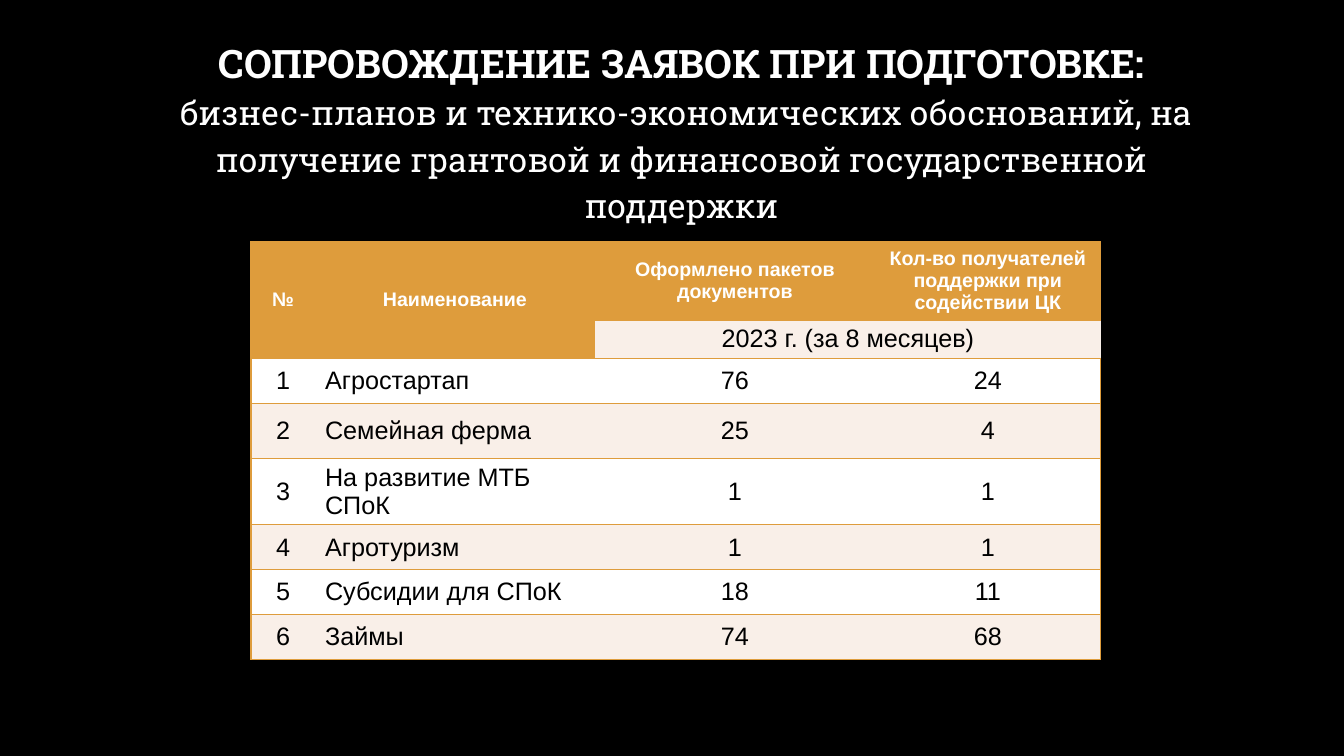
from itertools import accumulate

from lxml.etree import SubElement
from pptx import Presentation
from pptx.dml.color import RGBColor as RGB
from pptx.enum.text import MSO_ANCHOR as ANCHOR, PP_ALIGN as ALIGN
from pptx.oxml.ns import qn
from pptx.util import Emu, Pt

TITLE = "СОПРОВОЖДЕНИЕ ЗАЯВОК ПРИ ПОДГОТОВКЕ:"
SUBTITLE = (" бизнес-планов и технико-экономических обоснований, на получение "
            "грантовой и финансовой государственной поддержки")
HEADER = ["№", "Наименование", "Оформлено пакетов документов",
          "Кол-во получателей поддержки при содействии ЦК"]
PERIOD = "2023 г. (за 8 месяцев)"
SUPPORT = [
    ("Агростартап", 76, 24),
    ("Семейная ферма", 25, 4),
    ("На развитие МТБ СПоК", 1, 1),
    ("Агротуризм", 1, 1),
    ("Субсидии для СПоК", 18, 11),
    ("Займы", 74, 68),
]

THEME = {
    "background": RGB(0, 0, 0),
    "accent": "DE9C3C",
    "bands": ("FFFFFF", "F9EFE8"),
    "title": {"name": "Roboto Slab", "size": Pt(28), "bold": True},
    "subtitle": {"name": "Roboto Slab", "size": Pt(24), "bold": False},
    "header": {"name": "Arial", "size": Pt(14), "bold": True},
    "body": {"name": "Arial", "size": Pt(18), "bold": False},
    "light": RGB(255, 255, 255),
    "dark": RGB(0, 0, 0),
}

SLIDE = (1344, 756)
TITLE_BOX = (85, 27, 1143, 154)
TITLE_INDENT = 50
TABLE_AT = (251, 242)
COLUMNS = [64, 280, 280, 226]
ROWS = [78, 37, 45, 55, 66, 45, 45, 45]


def px(n):
    return Emu(round(n * 914400 / 100.8))


def write(p, text, style, color, align=ALIGN.CENTER):
    p.alignment = align
    r = p.add_run()
    r.text = text
    for name, value in THEME[style].items():
        setattr(r.font, name, value)
    r.font.color.rgb = color


def set_borders(cell, sides):
    """Draw the given sides in the accent colour and clear the others."""
    tc_pr = cell._tc.get_or_add_tcPr()
    for i, side in enumerate("LRTB"):
        ln = tc_pr.makeelement(qn(f"a:ln{side}"), {"w": str(Pt(1))})
        if side in sides:
            fill = SubElement(ln, qn("a:solidFill"))
            SubElement(fill, qn("a:srgbClr"), val=THEME["accent"])
        else:
            SubElement(ln, qn("a:noFill"))
        tc_pr.insert(i, ln)


def add_title(slide):
    tf = slide.shapes.add_textbox(*map(px, TITLE_BOX)).text_frame
    tf.word_wrap = True
    lines = [(TITLE, "title"), (SUBTITLE, "subtitle")]
    for i, (text, style) in enumerate(lines):
        p = tf.add_paragraph() if i else tf.paragraphs[0]
        p.line_spacing = 1.15
        p._p.get_or_add_pPr().set("marL", str(px(TITLE_INDENT)))
        write(p, text, style, THEME["light"])


def add_support_table(slide):
    grid = [HEADER, ["", "", PERIOD, ""]]
    grid += [[str(n), *map(str, row)] for n, row in enumerate(SUPPORT, 1)]
    size = (sum(COLUMNS), sum(ROWS))
    table = slide.shapes.add_table(len(ROWS), len(COLUMNS),
                                   *map(px, TABLE_AT + size)).table
    table.first_row = table.horz_banding = False
    for column, width in zip(table.columns, COLUMNS):
        column.width = px(width)
    for row, height in zip(table.rows, ROWS):
        row.height = px(height)

    for y, values in enumerate(grid):
        for x, text in enumerate(values):
            cell = table.cell(y, x)
            is_header = y == 0 or (y == 1 and x < 2)
            cell.vertical_anchor = ANCHOR.MIDDLE
            cell.fill.solid()
            cell.fill.fore_color.rgb = RGB.from_string(
                THEME["accent"] if is_header else THEME["bands"][y % 2])
            set_borders(cell, "TB" + {0: "L", len(COLUMNS) - 1: "R"}.get(x, ""))
            if text:
                write(cell.text_frame.paragraphs[0], text,
                      "header" if is_header else "body",
                      THEME["light" if is_header else "dark"],
                      ALIGN.LEFT if x == 1 and y > 1 else ALIGN.CENTER)

    for x in (0, 1):
        table.cell(0, x).merge(table.cell(1, x))
    table.cell(1, 2).merge(table.cell(1, 3))


def main():
    prs = Presentation()
    prs.slide_width, prs.slide_height = map(px, SLIDE)
    slide = prs.slides.add_slide(prs.slide_layouts[6])
    slide.background.fill.solid()
    slide.background.fill.fore_color.rgb = THEME["background"]
    add_support_table(slide)
    add_title(slide)
    prs.save("out.pptx")


if __name__ == "__main__":
    main()
